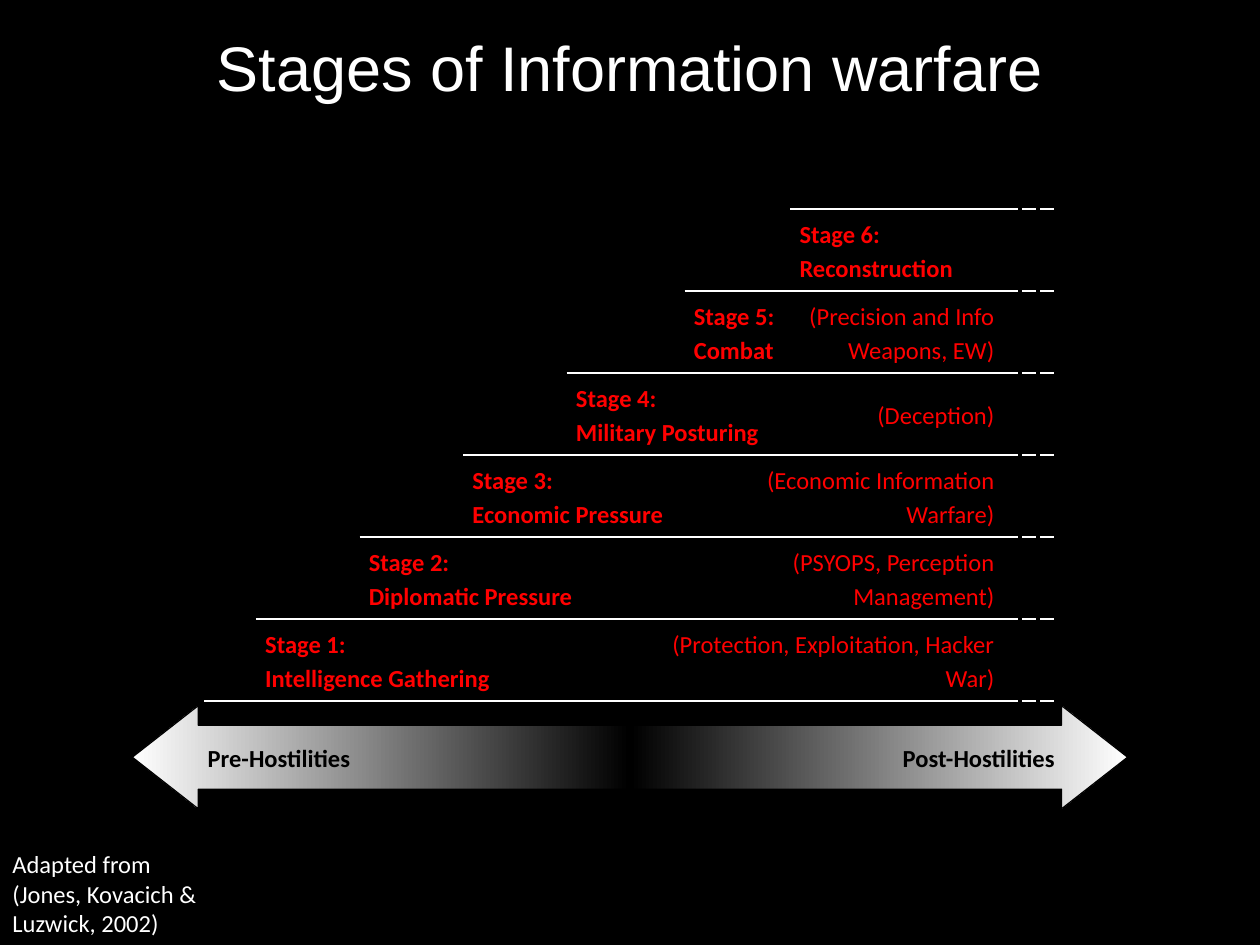
"""Build a slide with a staircase table of the stages of information warfare."""
from copy import deepcopy

from lxml import etree
from pptx import Presentation
from pptx.dml.color import RGBColor
from pptx.enum.shapes import MSO_SHAPE
from pptx.enum.text import MSO_ANCHOR, PP_ALIGN
from pptx.oxml.ns import qn
from pptx.util import Pt

WHITE = RGBColor(255, 255, 255)
BLACK = RGBColor(0, 0, 0)
RED = RGBColor(255, 0, 0)
LEFT, MID, RIGHT = PP_ALIGN.LEFT, PP_ALIGN.CENTER, PP_ALIGN.RIGHT
MIDDLE, TOP = MSO_ANCHOR.MIDDLE, MSO_ANCHOR.TOP
ARROW = MSO_SHAPE.LEFT_RIGHT_ARROW
PLAIN = "{2D5ABB26-0587-4C30-8999-92F81FD0307C}"
DASH = 18


def write(frame, lines, size, color, bold=False, align=LEFT, face="Calibri", space=None):
    frame.word_wrap = True
    for i, line in enumerate(lines):
        par = frame.add_paragraph() if i else frame.paragraphs[0]
        par.alignment = align
        par.line_spacing = space
        run = par.add_run()
        run.text = line
        run.font.size = Pt(size)
        run.font.name = face
        run.font.bold = bold
        run.font.color.rgb = color


def rule(cell, side, dash):
    line = etree.SubElement(cell._tc.get_or_add_tcPr(), qn(side), w=str(Pt(1.5)))
    fill = etree.SubElement(line, qn("a:solidFill"))
    etree.SubElement(fill, qn("a:srgbClr"), val=str(WHITE))
    etree.SubElement(line, qn("a:prstDash"), val="dash" if dash else "solid")


deck = Presentation()
deck.slide_width, deck.slide_height = Pt(720), Pt(540)
slide = deck.slides.add_slide(deck.slide_layouts[5])
slide.background.fill.solid()
slide.background.fill.fore_color.rgb = BLACK
shapes = slide.shapes

title = shapes.title
title.left, title.top, title.width, title.height = Pt(0), Pt(12.2), Pt(720), Pt(51)
title.text_frame.vertical_anchor = MIDDLE
write(title.text_frame, ["Stages of Information warfare"], 36, WHITE, align=MID, face="Arial")

widths = [29.6] * 9 + [30, 7.2] + [30.2] * 3 + [30.6] * 3 + [30.2] + [29.6] * 2
heights = [23.6] + [46.86] * 6 + [23.6]
frame = shapes.add_table(8, 20, Pt(57.5), Pt(95.9), Pt(sum(widths)), Pt(sum(heights)))
table = frame.table
table.first_row = table.horz_banding = False
table._tbl.tblPr.find(qn("a:tableStyleId")).text = PLAIN
for col, width in zip(table.columns, widths):
    col.width = Pt(width)
for row, height in zip(table.rows, heights):
    row.height = Pt(height)

starts = [14, 12, 9, 7, 5, 3, 2]
for r in range(8):
    for c in range(20):
        cell = table.cell(r, c)
        if r and starts[r - 1] <= c <= DASH:
            rule(cell, "a:lnT", c == DASH)
        if r < 7 and starts[r] <= c <= DASH:
            rule(cell, "a:lnB", c == DASH)
        cell.fill.background()
        cell.vertical_anchor = MIDDLE
        cell.margin_left = cell.margin_right = Pt(5.3)
        cell.margin_top = cell.margin_bottom = Pt(0)

for r, c in [(0, 9), (0, 14), (1, 9), (2, 10), (7, 9)]:
    table.cell(r, c).merge(table.cell(r, c + 1))

stages = [
    (18, ["Stage 6:", "Reconstruction"], None),
    (14, ["Stage 5: Combat"], "(Precision and Info Weapons, EW)"),
    (14, ["Stage 4:", "Military Posturing"], "(Deception)"),
    (13, ["Stage 3:", "Economic Pressure"], "(Economic Information Warfare)"),
    (12, ["Stage 2:", "Diplomatic Pressure"], "(PSYOPS, Perception Management)"),
    (11, ["Stage 1:", "Intelligence Gathering"], "(Protection, Exploitation, Hacker War)"),
]
for r, (split, name, means) in enumerate(stages, 1):
    label = table.cell(r, starts[r - 1])
    label.merge(table.cell(r, split - 1))
    write(label.text_frame, name, 14, RED, bold=True, space=1.15)
    if means:
        detail = table.cell(r, split)
        detail.merge(table.cell(r, DASH - 1))
        write(detail.text_frame, [means], 14, RED, align=RIGHT, space=1.15)

arrow = shapes.add_shape(ARROW, Pt(75.6), Pt(403.2), Pt(568.8), Pt(59))
arrow.shadow.inherit = False
arrow.adjustments[0], arrow.adjustments[1] = 0.62, 0.64
arrow.line.color.rgb = BLACK
arrow.line.width = Pt(0.75)
arrow.fill.gradient()
arrow.fill.gradient_angle = 0
stops = arrow._element.spPr.find(".//" + qn("a:gsLst"))
stops.append(deepcopy(stops[-1]))
for stop, (place, color) in zip(arrow.fill.gradient_stops, [(0, WHITE), (0.5, BLACK), (1, WHITE)]):
    stop.position = place
    stop.color.rgb = color

notes = [
    (111.6, 421.2, 100.8, 32.4, "Pre-Hostilities", BLACK, True, LEFT),
    (491, 421.2, 118.8, 32.4, "Post-Hostilities", BLACK, True, RIGHT),
    (0, 481.7, 126, 58.3, "Adapted from (Jones, Kovacich & Luzwick, 2002)", WHITE, False, LEFT),
]
for x, y, w, h, text, color, bold, align in notes:
    box = shapes.add_textbox(Pt(x), Pt(y), Pt(w), Pt(h))
    box.text_frame.vertical_anchor = TOP
    write(box.text_frame, [text], 14, color, bold, align)

deck.save("out.pptx")
